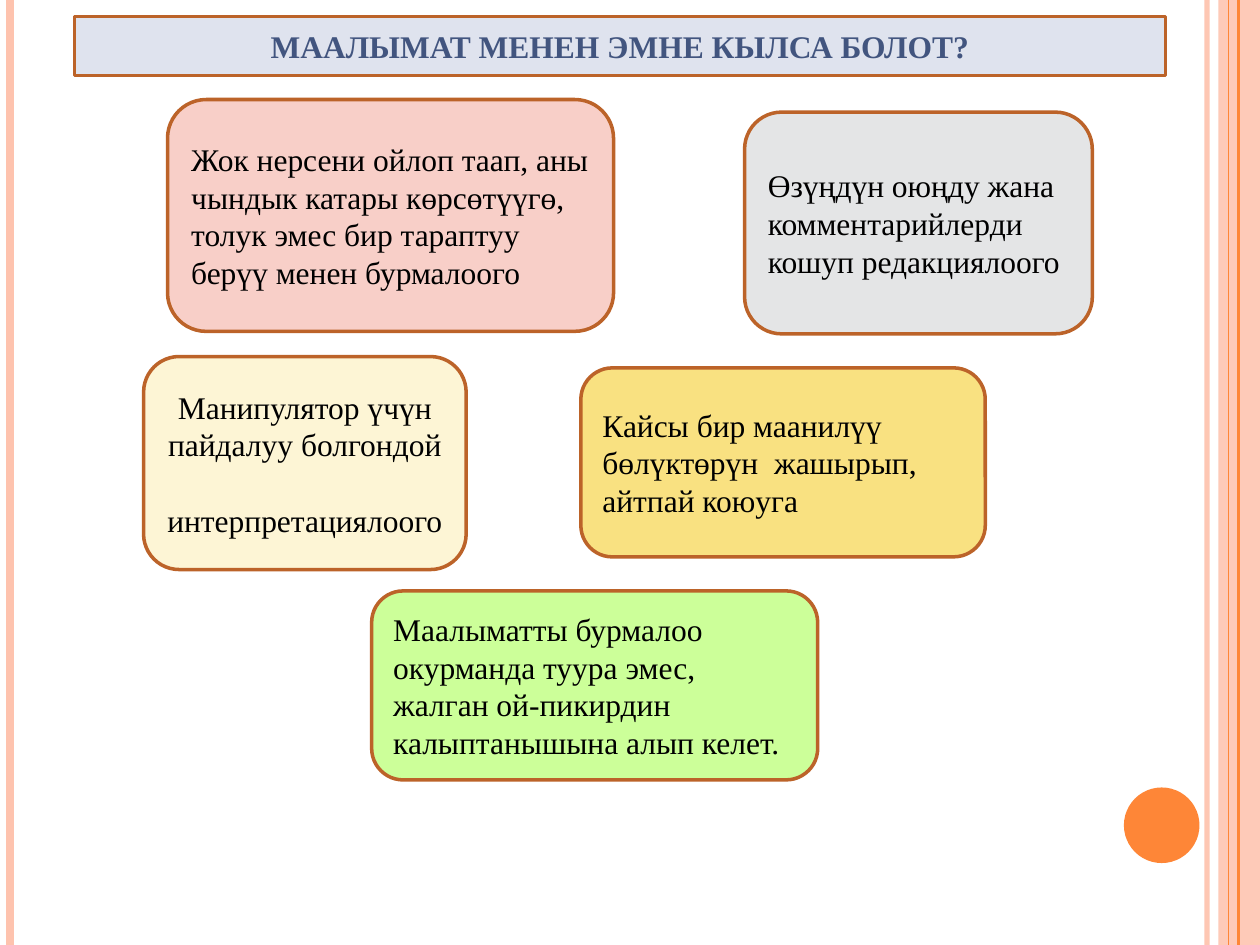
from dataclasses import dataclass

from lxml import etree
from pptx import Presentation
from pptx.dml.color import RGBColor
from pptx.enum.shapes import MSO_CONNECTOR, MSO_SHAPE
from pptx.enum.text import MSO_ANCHOR, MSO_AUTO_SIZE, PP_ALIGN
from pptx.oxml.ns import qn
from pptx.util import Inches, Pt

ROUNDED = MSO_SHAPE.ROUNDED_RECTANGLE
RECTANGLE = MSO_SHAPE.RECTANGLE
OVAL = MSO_SHAPE.OVAL
STRAIGHT = MSO_CONNECTOR.STRAIGHT
MIDDLE = MSO_ANCHOR.MIDDLE
NO_AUTOFIT = MSO_AUTO_SIZE.NONE
LEFT, CENTER = PP_ALIGN.LEFT, PP_ALIGN.CENTER


@dataclass(frozen=True)
class Theme:
    font: str = "Times New Roman"
    size: int = 18
    text: str = "000000"
    title_text: str = "42557F"
    title_fill: str = "DFE3EE"
    border: str = "BC6329"
    border_width: int = 2
    peach: str = "FEC3AE"
    orange: str = "FE8637"
    pink: str = "F8CFC8"
    grey: str = "E4E5E6"
    cream: str = "FDF5D5"
    yellow: str = "F9E181"
    green: str = "CCFF99"
    blank_line: float = 21.5


THEME = Theme()
WIDTH, HEIGHT = 10, 7.5

STRIPES = [
    (9.58, THEME.peach, 3, 93),
    (0.08, THEME.peach, 4.5, 100),
    (9.83, THEME.orange, 1.5, 100),
    (9.75, THEME.orange, 0.75, 100),
]

CARDS = [
    ((1.33, 0.79, 3.54, 1.84), THEME.pink, LEFT,
     ["Жок нерсени ойлоп таап, аны чындык катары көрсөтүүгө, "
      "толук эмес бир тараптуу берүү менен бурмалоого"]),
    ((5.91, 0.89, 2.76, 1.76), THEME.grey, LEFT,
     ["Өзүңдүн оюңду жана комментарийлерди кошуп редакциялоого"]),
    ((1.14, 2.83, 2.56, 1.69), THEME.cream, CENTER,
     ["Манипулятор үчүн пайдалуу болгондой", "интерпретациялоого"]),
    ((4.61, 2.92, 3.21, 1.5), THEME.yellow, LEFT,
     ["Кайсы бир маанилүү  бөлүктөрүн  жашырып, айтпай коюуга"]),
    ((2.95, 4.69, 3.54, 1.5), THEME.green, LEFT,
     ["Маалыматты бурмалоо окурманда туура эмес, "
      "жалган ой-пикирдин калыптанышына алып келет."]),
]


def apply(target, values):
    for name, value in values.items():
        setattr(target, name, value)


def paint(fill, color, opacity=100):
    fill.solid()
    fill.fore_color.rgb = RGBColor.from_string(color)
    if opacity < 100:
        for rgb in fill._xPr.iter(qn("a:srgbClr")):
            etree.SubElement(rgb, qn("a:alpha"), val=str(opacity * 1000))


def frame(panel, fill):
    paint(panel.fill, fill)
    paint(panel.line.fill, THEME.border)
    panel.line.width = Pt(THEME.border_width)


def write(panel, paragraphs, color, align, bold=False):
    body = panel.text_frame
    apply(body, {"word_wrap": True, "auto_size": NO_AUTOFIT,
                 "vertical_anchor": MIDDLE})
    body.text = "\n".join(paragraphs)
    for index, paragraph in enumerate(body.paragraphs):
        apply(paragraph, {"alignment": align,
                          "space_before": Pt(THEME.blank_line if index else 0)})
        for run in paragraph.runs:
            apply(run.font, {"name": THEME.font, "size": Pt(THEME.size), "bold": bold})
            run.font.color.rgb = RGBColor.from_string(color)


def add_stripe(slide, x, color, width, opacity):
    stripe = slide.shapes.add_connector(
        STRAIGHT, Inches(x), 0, Inches(x), Inches(HEIGHT))
    stripe.line.width = Pt(width)
    paint(stripe.line.fill, color, opacity)
    etree.SubElement(stripe._element.spPr, qn("a:effectLst"))


def add_panel(slide, kind, box, color, opacity=100):
    panel = slide.shapes.add_shape(kind, *map(Inches, box))
    panel.shadow.inherit = False
    paint(panel.fill, color, opacity)
    panel.line.fill.background()
    return panel


def add_title(slide, box, text):
    title = slide.shapes.title
    apply(title, dict(zip(("left", "top", "width", "height"), map(Inches, box))))
    outline = etree.Element(qn("a:prstGeom"), prst="roundRect")
    etree.SubElement(outline, qn("a:avLst"))
    title._element.spPr.insert(1, outline)
    frame(title, THEME.title_fill)
    write(title, [text], THEME.title_text, CENTER, bold=True)


def add_card(slide, box, color, align, paragraphs):
    card = add_panel(slide, ROUNDED, box, color)
    frame(card, color)
    write(card, paragraphs, THEME.text, align)


def main():
    deck = Presentation()
    apply(deck, {"slide_width": Inches(WIDTH), "slide_height": Inches(HEIGHT)})
    slide = deck.slides.add_slide(deck.slide_layouts[5])
    add_panel(slide, RECTANGLE, (9.67, 0, 0.33, HEIGHT), THEME.peach, 87)
    for stripe in STRIPES:
        add_stripe(slide, *stripe)
    add_panel(slide, OVAL, (8.92, 6.25, 0.6, 0.6), THEME.orange)
    add_title(slide, (0.59, 0.13, 8.66, 0.47), "МААЛЫМАТ МЕНЕН ЭМНЕ КЫЛСА БОЛОТ?")
    for card in CARDS:
        add_card(slide, *card)
    deck.save("out.pptx")


if __name__ == "__main__":
    main()
